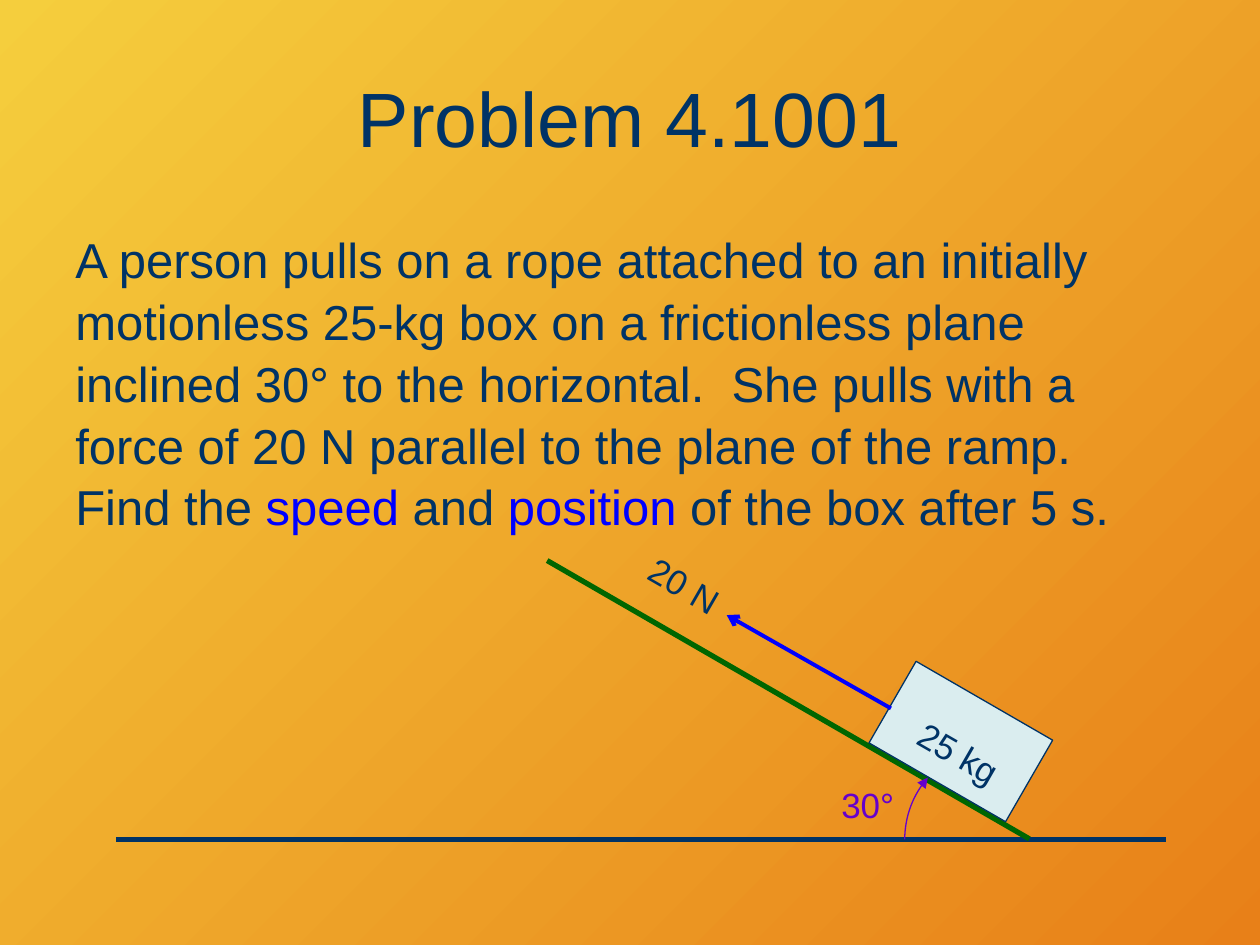
import math

from lxml import etree
from pptx import Presentation
from pptx.dml.color import RGBColor
from pptx.enum.shapes import MSO_CONNECTOR, MSO_SHAPE
from pptx.enum.text import MSO_ANCHOR, MSO_AUTO_SIZE, PP_ALIGN
from pptx.oxml.ns import qn
from pptx.util import Cm, Pt

STRAIGHT = MSO_CONNECTOR.STRAIGHT
RECT = MSO_SHAPE.RECTANGLE
MIDDLE, TOP = MSO_ANCHOR.MIDDLE, MSO_ANCHOR.TOP
CENTER, LEFT = PP_ALIGN.CENTER, PP_ALIGN.LEFT
FIT_SHAPE = MSO_AUTO_SIZE.SHAPE_TO_FIT_TEXT

FONT = "Arial"
SLOPE = 30
COLORS = {
    "sun": "F5CE3D",
    "ember": "E88018",
    "navy": "003366",
    "blue": "0000FF",
    "ramp": "006600",
    "angle": "6600CC",
    "box": "DAEDEF",
}


def rgb(name):
    return RGBColor.from_string(COLORS[name])


def set_background(s):
    fill = s.background.fill
    fill.gradient()
    fill.gradient_angle = 315
    for stop, name in zip(fill.gradient_stops, ("sun", "ember")):
        stop.color.rgb = rgb(name)


def add_text(shapes, box, runs, size, align=LEFT, anchor=TOP, spacing=1.0):
    """Wrapped text block; runs are (text, color) pairs."""
    sp = shapes.add_textbox(*map(Cm, box))
    tf = sp.text_frame
    tf.word_wrap = True
    tf.vertical_anchor = anchor
    p = tf.paragraphs[0]
    p.alignment = align
    p.line_spacing = spacing
    for text, color in runs:
        r = p.add_run()
        r.text = text
        r.font.name = FONT
        r.font.size = Pt(size)
        r.font.color.rgb = rgb(color)
    return sp


def add_label(shapes, box, text, color, rotation=0):
    """Short unwrapped diagram label."""
    sp = add_text(shapes, box, [(text, color)], 20)
    sp.text_frame.word_wrap = False
    sp.text_frame.auto_size = FIT_SHAPE
    sp.rotation = rotation


def style_line(sp, color, width, head=None):
    sp.line.color.rgb = rgb(color)
    sp.line.width = Pt(width)
    if head:
        ln = sp.line._get_or_add_ln()
        etree.SubElement(ln, qn("a:tailEnd"), type=head)


def add_line(shapes, start, end, color, width, head=None):
    sp = shapes.add_connector(STRAIGHT, *map(Cm, start + end))
    style_line(sp, color, width, head)
    etree.SubElement(sp._element.spPr, qn("a:effectLst"))


def add_angle_arc(shapes, center, radius, sweep, steps=16):
    """Open arc rising clockwise from the horizontal, with an arrowhead."""
    points = []
    for i in range(steps + 1):
        a = math.radians(sweep * i / steps)
        points.append((Cm(center[0] - radius * math.cos(a)),
                       Cm(center[1] - radius * math.sin(a))))
    builder = shapes.build_freeform(*points[0])
    builder.add_line_segments(points[1:], close=False)
    sp = builder.convert_to_shape()
    sp.fill.background()
    sp.shadow.inherit = False
    style_line(sp, "angle", 0.75, "triangle")


def add_crate(shapes):
    """Box on the ramp, grouped with its mass."""
    group = shapes.add_group_shape().shapes
    sp = group.add_shape(RECT, Cm(17.78), Cm(14), Cm(3.18), Cm(1.9))
    sp.rotation = SLOPE
    sp.shadow.inherit = False
    sp.fill.solid()
    sp.fill.fore_color.rgb = rgb("box")
    style_line(sp, "navy", 0.75)
    add_label(group, (18.21, 14.63, 2.24, 1.1), "25 kg", "navy", SLOPE)


def main():
    prs = Presentation()
    prs.slide_width, prs.slide_height = Cm(25.4), Cm(19.05)
    s = prs.slides.add_slide(prs.slide_layouts[6])
    shapes = s.shapes
    set_background(s)

    # Title and problem statement
    add_text(shapes, (1.27, 0.76, 22.86, 3.18), [("Problem 4.1001", "navy")],
             44, CENTER, MIDDLE)
    add_text(shapes, (1.27, 4.45, 22.86, 6.35), [
        ("A person pulls on a rope attached to an initially motionless "
         "25-kg box on a frictionless plane inclined 30° to the horizontal.  "
         "She pulls with a force of 20 N parallel to the plane of the ramp.  "
         "Find the ", "navy"),
        ("speed", "blue"),
        (" and ", "navy"),
        ("position", "blue"),
        (" of the box after 5 s.", "navy"),
    ], 28, spacing=1.05)

    # Ground, ramp and angle
    add_line(shapes, (2.34, 16.93), (23.5, 16.93), "navy", 3)
    add_line(shapes, (11.03, 11.3), (20.75, 16.91), "ramp", 3)
    add_angle_arc(shapes, (20.14, 16.92), 1.9, 41)
    add_label(shapes, (16.71, 15.67, 1.57, 1.1), "30°", "angle")

    # Crate and pulling force
    add_crate(shapes)
    add_line(shapes, (17.96, 14.28), (14.65, 12.4), "blue", 2.25, "arrow")
    add_label(shapes, (12.8, 11.25, 2, 1.1), "20 N", "navy", SLOPE)

    prs.save("out.pptx")


if __name__ == "__main__":
    main()
